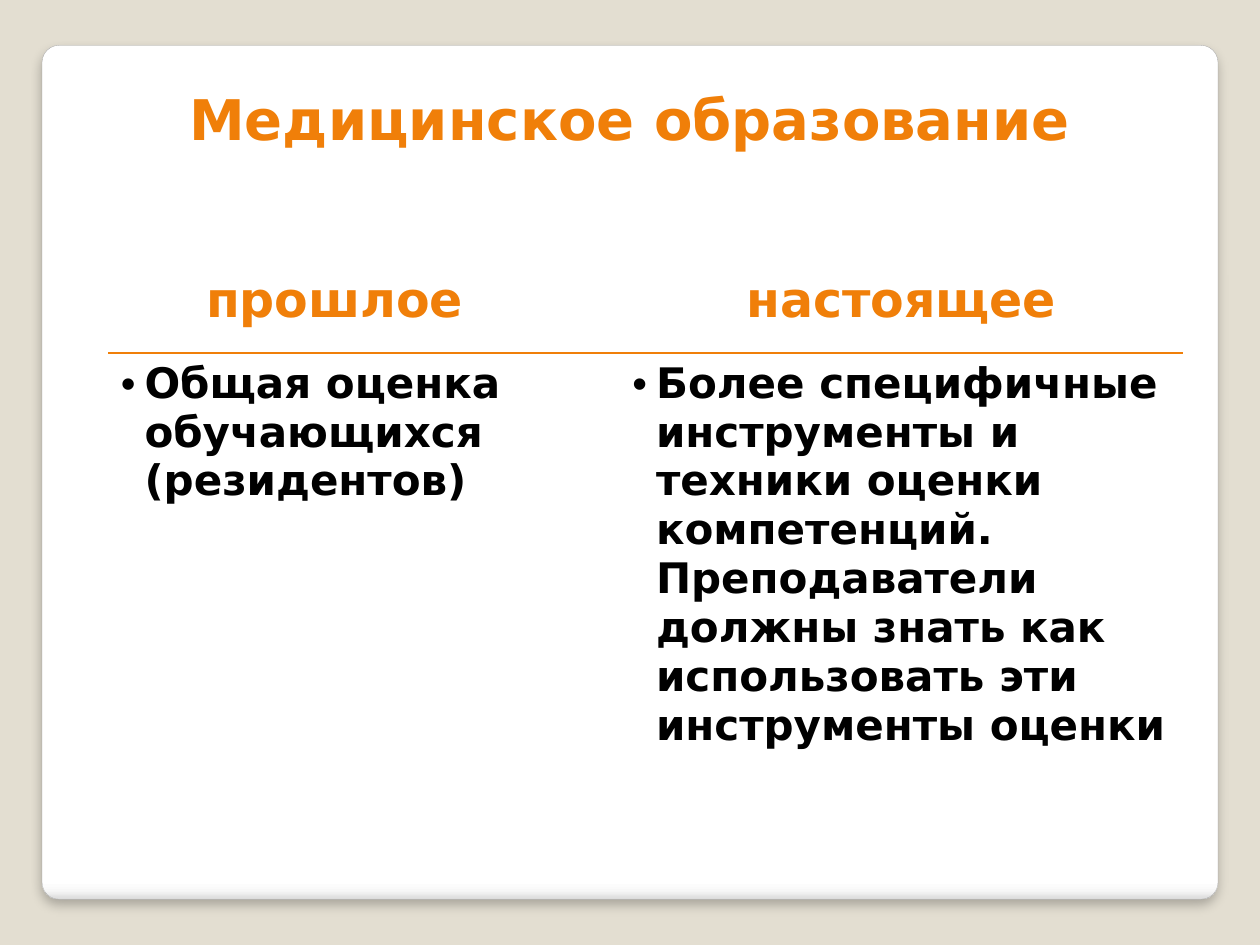
from lxml.etree import SubElement
from pptx import Presentation
from pptx.dml.color import RGBColor
from pptx.enum.shapes import MSO_SHAPE
from pptx.enum.text import MSO_ANCHOR, PP_ALIGN
from pptx.oxml.ns import qn
from pptx.util import Pt

# Content: the empty middle column is a gutter
TITLE = "Медицинское образование"
COMPARISON = [
    ("прошлое", "", "настоящее"),
    ("Общая оценка обучающихся (резидентов)", "",
     "Более специфичные инструменты и техники оценки компетенций. "
     "Преподаватели должны знать как использовать эти инструменты оценки"),
]

THEME = {
    "font": "DejaVu Sans",
    "backdrop": "E3DED1", "accent": "F07F09", "body": "000000",
    "card_line": "A4A4A4", "shadow": "000000",
    "card_stops": [(0, "FFFFFF"), (98, "FFFFFF"), (99, "F7F7F7"), (100, "DADADA")],
    "title_size": 32, "header_size": 28, "body_size": 24,
}

# Layout in points
SLIDE_WIDTH, SLIDE_HEIGHT = 720, 540
CARD = (24, 25.9, 672, 488)
TITLE_BOX = (0, 21.6, SLIDE_WIDTH, 68.4)
TABLE_LEFT, TABLE_TOP = 61.9, 151.9
COLUMN_WIDTHS = (258.5, 33.8, 321.8)
ROW_HEIGHTS = (49.7, 261.4)
BULLET_INDENT = 13.5


def color(name):
    return RGBColor.from_string(THEME[name])


def add_color(parent, value, alpha=None):
    node = SubElement(parent, qn("a:srgbClr"), val=value)
    if alpha is not None:
        SubElement(node, qn("a:alpha"), val=str(alpha * 1000))


def style_text(paragraph, size, color_name):
    for run in paragraph.runs:
        run.font.name = THEME["font"]
        run.font.size = Pt(THEME[size])
        run.font.bold = True
        run.font.color.rgb = color(color_name)


def add_bullet(paragraph):
    properties = paragraph._p.get_or_add_pPr()
    properties.set("marL", str(Pt(BULLET_INDENT)))
    properties.set("indent", str(-Pt(BULLET_INDENT)))
    SubElement(properties, qn("a:buFont"), typeface="Arial")
    SubElement(properties, qn("a:buChar"), char="•")


def set_borders(cell, ruled_side):
    properties = cell._tc.get_or_add_tcPr()
    for index, side in enumerate(("lnL", "lnR", "lnT", "lnB")):
        border = properties.makeelement(qn(f"a:{side}"), {"w": str(Pt(1))})
        properties.insert(index, border)
        if side == ruled_side:
            add_color(SubElement(border, qn("a:solidFill")), THEME["accent"])
        else:
            SubElement(border, qn("a:noFill"))


def add_card(slide):
    card = slide.shapes.add_shape(MSO_SHAPE.ROUNDED_RECTANGLE, *map(Pt, CARD))
    card.adjustments[0] = 0.02
    card.line.color.rgb = color("card_line")
    card.line.width = Pt(0.16)
    card.fill.gradient()
    card.fill.gradient_angle = 270
    stops = card._element.spPr.find(f".//{qn('a:gsLst')}")
    for stop in list(stops):
        stops.remove(stop)
    for position, value in THEME["card_stops"]:
        add_color(SubElement(stops, qn("a:gs"), pos=str(position * 1000)), value)
    # Soft shadow straight below the card
    card.shadow.inherit = False
    shadow = SubElement(card._element.spPr.find(qn("a:effectLst")), qn("a:outerShdw"),
                        blurRad=str(Pt(6)), dist=str(Pt(4)), dir="5400000",
                        algn="t", rotWithShape="0")
    add_color(shadow, THEME["shadow"], alpha=25)


def add_comparison(slide):
    table = slide.shapes.add_table(
        len(ROW_HEIGHTS), len(COLUMN_WIDTHS), Pt(TABLE_LEFT), Pt(TABLE_TOP),
        Pt(sum(COLUMN_WIDTHS)), Pt(sum(ROW_HEIGHTS))).table
    table.first_row = table.horz_banding = False
    for column, width in zip(table.columns, COLUMN_WIDTHS):
        column.width = Pt(width)
    for row_index, (row, height) in enumerate(zip(table.rows, ROW_HEIGHTS)):
        row.height = Pt(height)
        is_header = row_index == 0
        for cell, wording in zip(row.cells, COMPARISON[row_index]):
            cell.fill.background()
            set_borders(cell, "lnB" if is_header else "lnT")
            if not wording:
                continue
            cell.text_frame.text = wording
            paragraph = cell.text_frame.paragraphs[0]
            if is_header:
                paragraph.alignment = PP_ALIGN.CENTER
                style_text(paragraph, "header_size", "accent")
            else:
                add_bullet(paragraph)
                style_text(paragraph, "body_size", "body")


def add_title(slide):
    frame = slide.shapes.add_textbox(*map(Pt, TITLE_BOX)).text_frame
    frame.word_wrap = True
    frame.vertical_anchor = MSO_ANCHOR.BOTTOM
    frame.text = TITLE
    frame.paragraphs[0].alignment = PP_ALIGN.CENTER
    style_text(frame.paragraphs[0], "title_size", "accent")


def main():
    presentation = Presentation()
    presentation.slide_width, presentation.slide_height = Pt(SLIDE_WIDTH), Pt(SLIDE_HEIGHT)
    slide = presentation.slides.add_slide(presentation.slide_layouts[6])
    slide.background.fill.solid()
    slide.background.fill.fore_color.rgb = color("backdrop")
    add_card(slide)
    add_comparison(slide)
    add_title(slide)
    presentation.save("out.pptx")


if __name__ == "__main__":
    main()
